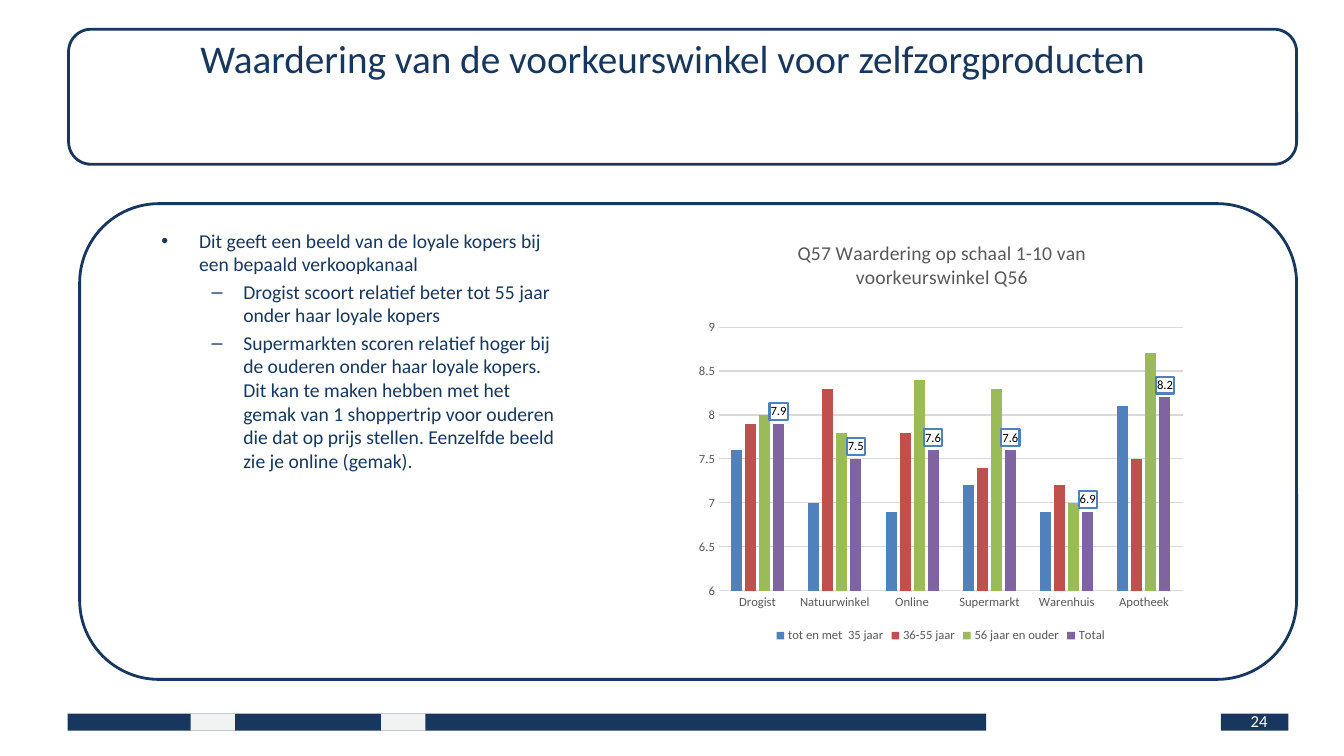
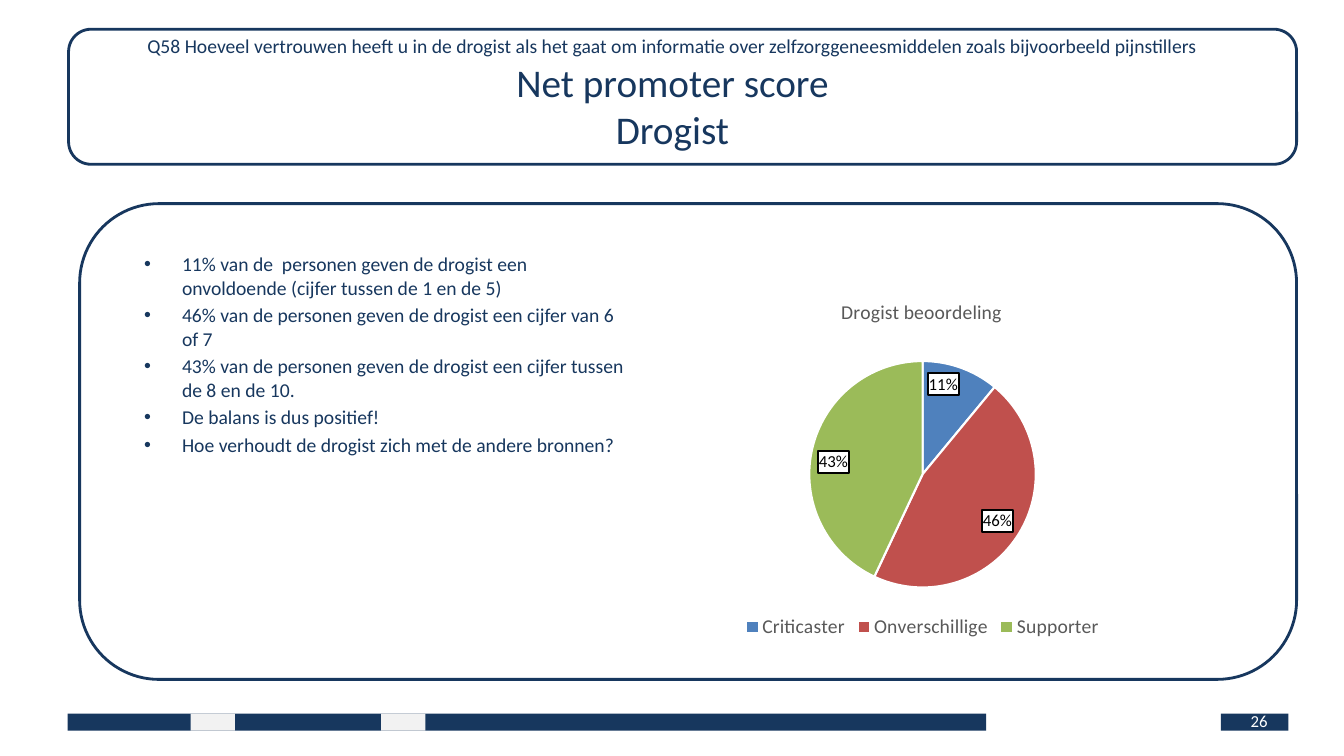
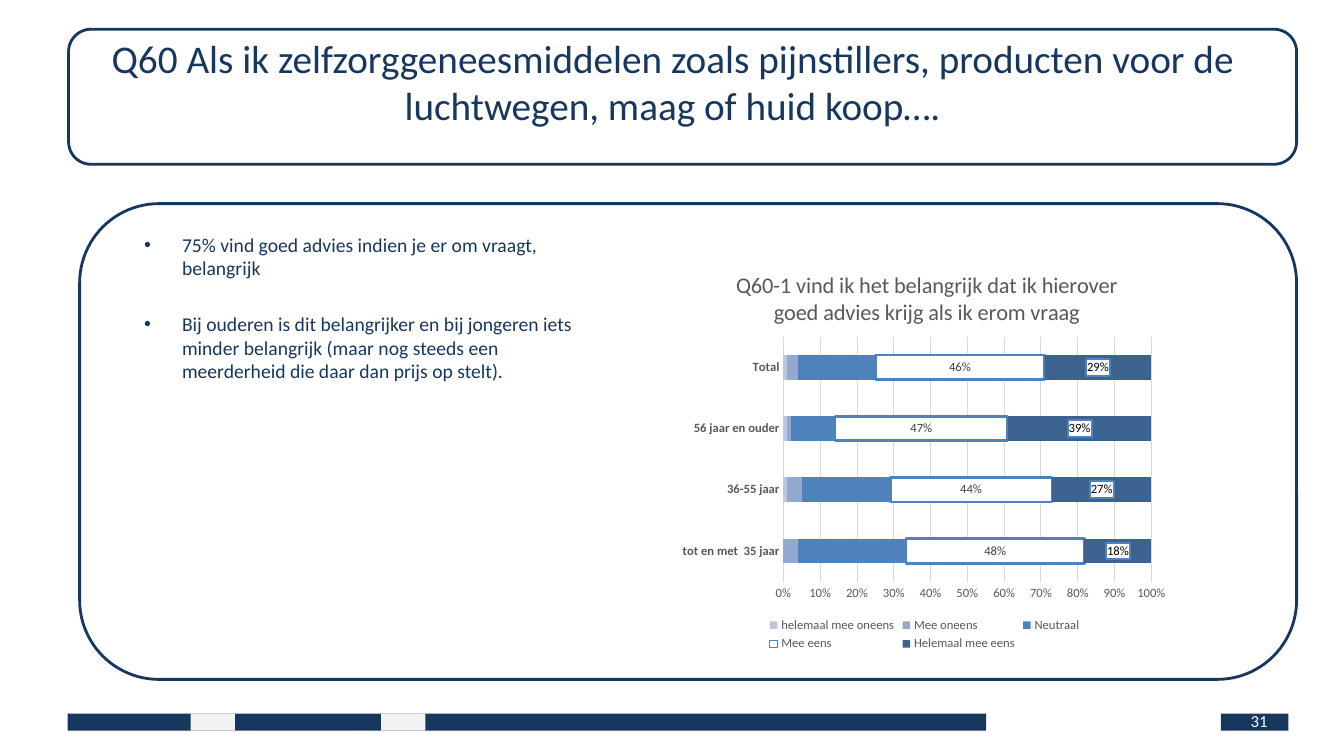
from lxml import etree
from pptx import Presentation
from pptx.chart.data import CategoryChartData as Data
from pptx.dml.color import RGBColor
from pptx.enum.chart import XL_CHART_TYPE as Kind
from pptx.enum.chart import XL_LABEL_POSITION as Spot
from pptx.enum.chart import XL_LEGEND_POSITION as Side
from pptx.enum.chart import XL_TICK_MARK as Tick
from pptx.enum.shapes import MSO_SHAPE as Form
from pptx.enum.text import MSO_ANCHOR as Anchor
from pptx.enum.text import MSO_AUTO_SIZE as Fit
from pptx.enum.text import PP_ALIGN as Align
from pptx.oxml import parse_xml
from pptx.oxml.ns import nsdecls, qn
from pptx.util import Inches, Pt

NAVY = RGBColor(0x17, 0x37, 0x5E)
PALE = RGBColor(0xF2, 0xF2, 0xF2)
WHITE = RGBColor(0xFF, 0xFF, 0xFF)
BLACK = RGBColor(0x00, 0x00, 0x00)
GREY = RGBColor(0x59, 0x59, 0x59)
DARK = RGBColor(0x40, 0x40, 0x40)
RULE = RGBColor(0xD9, 0xD9, 0xD9)
BLUE = RGBColor(0x4F, 0x81, 0xBD)
RED = RGBColor(0xC0, 0x50, 0x4D)
GREEN = RGBColor(0x9B, 0xBB, 0x59)
PLUM = RGBColor(0x80, 0x64, 0xA2)
MIST = RGBColor(0xBC, 0xC8, 0xDF)
HAZE = RGBColor(0x93, 0xA9, 0xCF)
STEEL = RGBColor(0x3C, 0x62, 0x8F)
FACE = "Calibri"


def style(font, size, color, bold=False):
    font.name = FACE
    font.size = Pt(size)
    font.color.rgb = color
    font.bold = bold


def place(node, inner, **spots):
    old = node.find(qn("c:layout"))
    if old is not None:
        node.remove(old)
    lay = etree.Element(qn("c:layout"))
    man = etree.SubElement(lay, qn("c:manualLayout"))
    if inner:
        etree.SubElement(man, qn("c:layoutTarget")).set("val", "inner")
    for key in "xy":
        etree.SubElement(man, qn(f"c:{key}Mode")).set("val", "edge")
    for key, val in spots.items():
        etree.SubElement(man, qn(f"c:{key}")).set("val", str(val))
    text = node.find(qn("c:tx"))
    node.insert(0 if text is None else node.index(text) + 1, lay)


PAGES = [
    {
        "page": 24,
        "title": [("Waardering van de voorkeurswinkel voor zelfzorgproducten", 28)],
        "body": (1.5, 2.22, 4.23, 4.48),
        "items": [
            (0, "Dit geeft een beeld van de loyale kopers bij een bepaald verkoopkanaal"),
            (1, "Drogist scoort relatief beter tot 55 jaar onder haar loyale kopers"),
            (1, "Supermarkten scoren relatief hoger bij de ouderen onder haar loyale kopers. "
                "Dit kan te maken hebben met het gemak van 1 shoppertrip voor ouderen die dat "
                "op prijs stellen. Eenzelfde beeld zie je online (gemak)."),
        ],
        "kind": Kind.COLUMN_CLUSTERED,
        "box": (6.83, 2.13, 5, 4.29),
        "head": "Q57 Waardering op schaal 1-10 van\nvoorkeurswinkel Q56",
        "size": 14,
        "left": 0.21,
        "plot": {"x": 0.06, "y": 0.26, "w": 0.92, "h": 0.61},
        "key": 9,
        "form": "General",
        "cats": ["Drogist", "Natuurwinkel", "Online", "Supermarkt", "Warenhuis", "Apotheek"],
        "rows": [
            ("tot en met  35 jaar", [7.6, 7, 6.9, 7.2, 6.9, 8.1], BLUE),
            ("36-55 jaar", [7.9, 8.3, 7.8, 7.4, 7.2, 7.5], RED),
            ("56 jaar en ouder", [8, 7.8, 8.4, 8.3, 7, 8.7], GREEN),
            ("Total", [7.9, 7.5, 7.6, 7.6, 6.9, 8.2], PLUM),
        ],
        "gap": (219, -27),
        "marks": {3: BLACK},
        "spot": Spot.OUTSIDE_END,
        "mark": 9,
        "edge": BLUE,
    },
    {
        "page": 26,
        "title": [
            ("Q58 Hoeveel vertrouwen heeft u in de drogist als het gaat om informatie over "
             "zelfzorggeneesmiddelen zoals bijvoorbeeld pijnstillers", 14),
            ("Net promoter score", 28),
            ("Drogist", 28),
        ],
        "body": (1.33, 2.45, 5.02, 4.05),
        "items": [
            (0, "11% van de  personen geven de drogist een onvoldoende (cijfer tussen de 1 en de 5)"),
            (0, "46% van de personen geven de drogist een cijfer van 6 of 7"),
            (0, "43% van de personen geven de drogist een cijfer tussen de 8 en de 10."),
            (0, "De balans is dus positief!"),
            (0, "Hoe verhoudt de drogist zich met de andere bronnen?"),
        ],
        "kind": Kind.PIE,
        "box": (5.64, 2.74, 7.02, 3.64),
        "head": "Drogist beoordeling",
        "size": 14,
        "left": 0.38,
        "plot": {"x": 0.34, "y": 0.23, "w": 0.32, "h": 0.62},
        "key": 14,
        "form": "0%",
        "cats": ["Criticaster", "Onverschillige", "Supporter"],
        "rows": [("Series 1", [0.11, 0.46, 0.43], None)],
        "marks": {0: BLACK},
        "spot": Spot.INSIDE_END,
        "mark": 12,
        "edge": BLACK,
    },
    {
        "page": 31,
        "title": [("Q60 Als ik zelfzorggeneesmiddelen zoals pijnstillers, producten voor de "
                   "luchtwegen, maag of huid koop….", 28)],
        "body": (1.33, 2.26, 4.79, 4.25),
        "items": [
            (0, "75% vind goed advies indien je er om vraagt, belangrijk"),
            (0, "Bij ouderen is dit belangrijker en bij jongeren iets minder belangrijk "
                "(maar nog steeds een meerderheid die daar dan prijs op stelt)."),
        ],
        "space": 23,
        "kind": Kind.BAR_STACKED_100,
        "box": (6.67, 2.45, 5, 4.05),
        "head": "Q60-1 vind ik het belangrijk dat ik hierover\ngoed advies krijg als ik erom vraag",
        "size": 16,
        "left": 0.12,
        "plot": {"x": 0.22, "y": 0.22, "w": 0.73, "h": 0.6},
        "key": 9,
        "form": "0%",
        "cats": ["tot en met  35 jaar", "36-55 jaar", "56 jaar en ouder", "Total"],
        "rows": [
            ("helemaal mee oneens", [0, 0.01, 0.01, 0.01], MIST),
            ("Mee oneens", [0.04, 0.04, 0.01, 0.03], HAZE),
            ("Neutraal", [0.29, 0.24, 0.12, 0.21], BLUE),
            ("Mee eens", [0.48, 0.44, 0.47, 0.46], WHITE),
            ("Helemaal mee eens", [0.18, 0.27, 0.39, 0.29], STEEL),
        ],
        "gap": (150, 100),
        "marks": {3: DARK, 4: BLACK},
        "spot": Spot.CENTER,
        "mark": 9,
        "edge": BLUE,
    },
]

deck = Presentation()
deck.slide_width = Inches(13.33)
deck.slide_height = Inches(7.5)
base = deck.slide_layouts[1]
slides = [deck.slides.add_slide(base) for _ in PAGES]

DECOR = [
    (Form.RECTANGLE, (0.67, 7.08, 9.11, 0.17), NAVY),
    (Form.RECTANGLE, (12.11, 7.08, 0.67, 0.17), NAVY),
    (Form.RECTANGLE, (1.89, 7.08, 0.44, 0.17), PALE),
    (Form.RECTANGLE, (3.78, 7.08, 0.44, 0.17), PALE),
    (Form.ROUNDED_RECTANGLE, (0.68, 0.29, 12.18, 1.34), None),
    (Form.ROUNDED_RECTANGLE, (0.79, 2.02, 12.07, 4.72), None),
]
for num, (form, box, fill) in enumerate(DECOR, 20):
    part = slides[0].shapes.add_shape(form, *map(Inches, box))
    part.shadow.inherit = False
    if fill is None:
        part.fill.background()
        part.line.color.rgb = NAVY
        part.line.width = Pt(2)
    else:
        part.fill.solid()
        part.fill.fore_color.rgb = fill
        part.line.fill.background()
    part.element.nvSpPr.cNvPr.id = num
    base.shapes.element.append(part.element)

for slide, page in zip(slides, PAGES):
    title, body = slide.placeholders
    for hold, box in ((title, (0.67, 0.29, 12, 1.25)), (body, page["body"])):
        hold.left, hold.top, hold.width, hold.height = map(Inches, box)
        hold.text_frame.auto_size = Fit.NONE
        hold.text_frame.vertical_anchor = Anchor.TOP

    title.text_frame.text = "\n".join(text for text, _ in page["title"])
    for para, (_, size) in zip(title.text_frame.paragraphs, page["title"]):
        para.alignment = Align.CENTER
        style(para.runs[0].font, size, NAVY)

    body.text_frame.text = "\n".join(text for _, text in page["items"])
    for num, (level, _) in enumerate(page["items"]):
        para = body.text_frame.paragraphs[num]
        para.level = level
        para.space_before = Pt(page.get("space", 2.8) if num else 0)
        style(para.runs[0].font, 14, NAVY)

    data = Data(number_format=page["form"])
    data.categories = page["cats"]
    for name, vals, _ in page["rows"]:
        data.add_series(name, vals)
    chart = slide.shapes.add_chart(page["kind"], *map(Inches, page["box"]), data).chart
    style(chart.font, 10, BLACK)
    chart.has_title = True
    head = chart.chart_title
    head.include_in_layout = False
    head.text_frame.text = page["head"]
    for para in head.text_frame.paragraphs:
        style(para.font, page["size"], GREY)
        style(para.runs[0].font, page["size"], GREY)
    place(next(chart.element.iter(qn("c:title"))), False, x=page["left"], y=0.05)
    place(next(chart.element.iter(qn("c:plotArea"))), True, **page["plot"])
    chart.has_legend = True
    chart.legend.position = Side.BOTTOM
    chart.legend.include_in_layout = False
    style(chart.legend.font, page["key"], GREY)

    plot = chart.plots[0]
    if page["kind"] == Kind.PIE:
        plot.vary_by_categories = True
        for num, color in enumerate((BLUE, RED, GREEN)):
            look = plot.series[0].points[num].format
            look.fill.solid()
            look.fill.fore_color.rgb = color
            look.line.color.rgb = WHITE
            look.line.width = Pt(1.5)
    else:
        plot.vary_by_categories = False
        plot.gap_width, plot.overlap = page["gap"]
        for row, (_, _, color) in zip(plot.series, page["rows"]):
            row.invert_if_negative = False
            row.format.fill.solid()
            row.format.fill.fore_color.rgb = color
            if color == WHITE:
                row.format.line.color.rgb = BLUE
                row.format.line.width = Pt(2)
        cat, val = chart.category_axis, chart.value_axis
        stack = page["kind"] == Kind.BAR_STACKED_100
        for axis, bold in ((cat, stack), (val, False)):
            axis.major_tick_mark = axis.minor_tick_mark = Tick.NONE
            style(axis.tick_labels.font, 9, GREY, bold)
        val.tick_labels.number_format = page["form"]
        val.tick_labels.number_format_is_linked = False
        val.format.line.fill.background()
        val.has_major_gridlines = True
        for line in (cat.format.line, val.major_gridlines.format.line):
            line.color.rgb = RULE
            line.width = Pt(0.75)
        if not stack:
            val.minimum_scale, val.maximum_scale, val.major_unit = 6, 9, 0.5

    for num, color in page["marks"].items():
        mark = plot.series[num].data_labels
        mark.show_value = True
        mark.number_format = page["form"]
        mark.number_format_is_linked = False
        mark.position = page["spot"]
        style(mark.font, page["mark"], color)
    last = [*chart.element.iter(qn("c:dLbls"))][-1]
    last.find(qn("c:txPr")).addprevious(parse_xml(
        f'<c:spPr {nsdecls("c", "a")}><a:solidFill><a:srgbClr val="{WHITE}"/></a:solidFill>'
        f'<a:ln w="{Pt(1.5)}"><a:solidFill><a:srgbClr val="{page["edge"]}"/></a:solidFill></a:ln>'
        '</c:spPr>'))

    foot = slide.shapes.add_textbox(*map(Inches, (9.56, 6.95, 3.11, 0.4))).text_frame
    foot.word_wrap = True
    foot.vertical_anchor = Anchor.MIDDLE
    foot.text = str(page["page"])
    foot.paragraphs[0].alignment = Align.RIGHT
    style(foot.paragraphs[0].runs[0].font, 12, WHITE)

deck.save("out.pptx")
